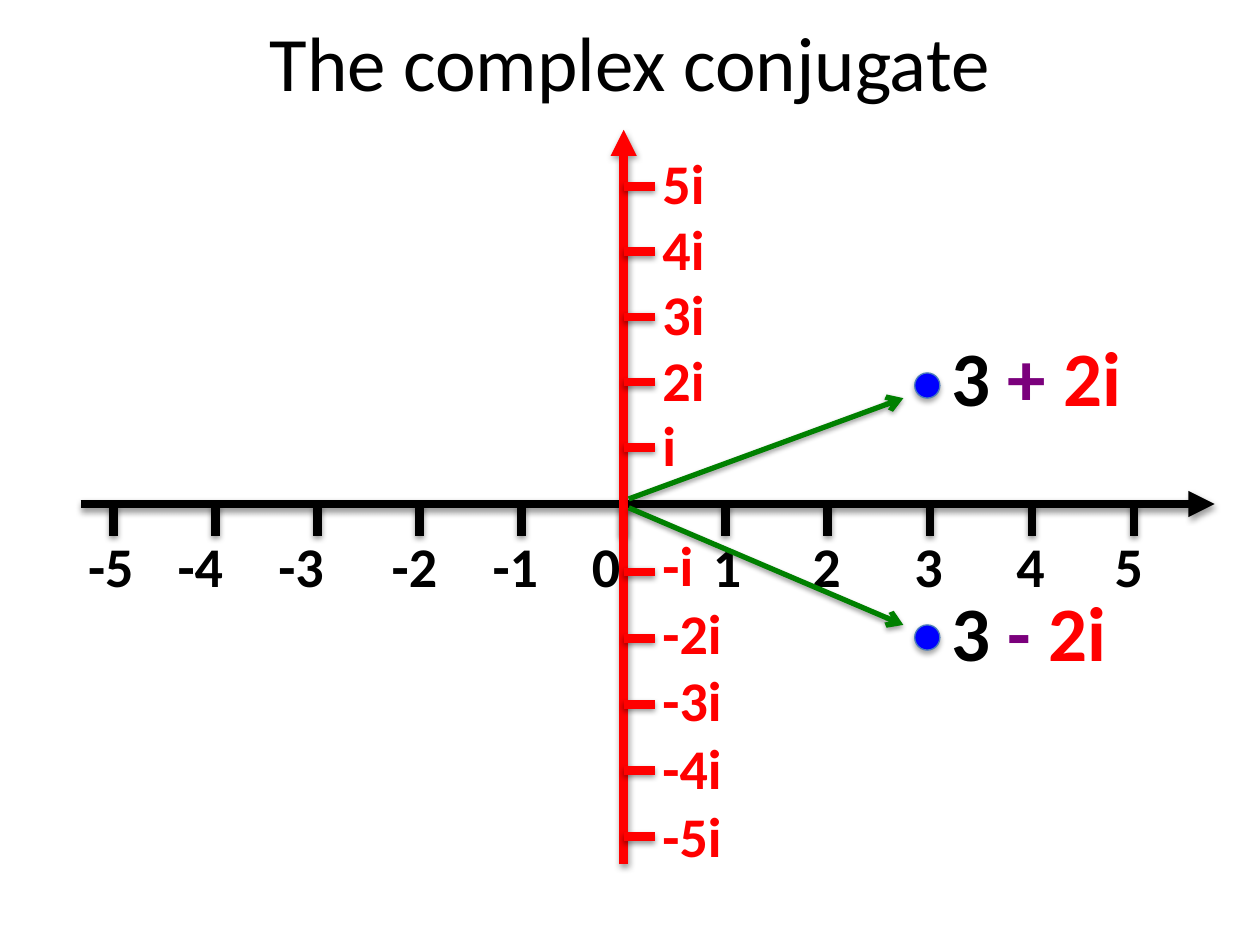
"""Build a slide that plots a complex number and its conjugate."""
from dataclasses import dataclass

from lxml import etree
from pptx import Presentation
from pptx import util as u
from pptx.dml.color import RGBColor
from pptx.enum import shapes, text
from pptx.oxml.ns import qn


@dataclass(frozen=True)
class Theme:
    """Colours, type sizes and line widths of the slide."""
    font: str = "Calibri"
    real: str = "000000"
    imaginary: str = "FF0000"
    operator: str = "7B007C"
    vector: str = "008000"
    point: str = "0000FF"
    outline: str = "4B7EBC"
    large: int = 44
    label: int = 32
    axis_width: float = 5
    vector_width: float = 3
    outline_width: float = 0.75


THEME = Theme()
ORIGIN_X, AXIS_Y = 4.95, 4
UNIT, TICK = 0.81, 0.25
REAL_CENTRES = (0.88, 1.59, 2.39, 3.29, 4.09, 4.81, 5.77, 6.56, 7.37, 8.18, 8.96)


def rgb(colour):
    """Turn a hex string into a colour."""
    return RGBColor.from_string(colour)


def spread(first, last, count=5):
    """Return evenly spaced values from first to last."""
    return [first + (last - first) * i / (count - 1) for i in range(count)]


def add_shadow(shape, opacity, distance):
    """Give a shape a soft shadow that falls straight down."""
    effects = etree.SubElement(shape.element.spPr, qn("a:effectLst"))
    shadow = etree.SubElement(
        effects, qn("a:outerShdw"), blurRad=str(u.Pt(3.1)), dist=str(u.Pt(distance)),
        dir="5400000", rotWithShape="0")
    colour = etree.SubElement(shadow, qn("a:srgbClr"), val="000000")
    etree.SubElement(colour, qn("a:alpha"), val=str(opacity * 1000))


def add_line(slide, start, end, colour, width=THEME.axis_width, head=None):
    """Draw a straight line, with an arrowhead at its end if one is named."""
    line = slide.shapes.add_connector(
        shapes.MSO_CONNECTOR.STRAIGHT, *(u.Inches(value) for value in (*start, *end)))
    line.line.color.rgb = rgb(colour)
    line.line.width = u.Pt(width)
    if head:
        etree.SubElement(line.element.spPr.find(qn("a:ln")), qn("a:tailEnd"), type=head)
    add_shadow(line, 38, 1.6)


def add_text(slide, box, runs, size, bold=True, align=text.PP_ALIGN.LEFT,
             anchor=text.MSO_ANCHOR.TOP):
    """Add one line of text made of (words, colour) runs."""
    frame = slide.shapes.add_textbox(*(u.Inches(value) for value in box)).text_frame
    frame.word_wrap = True
    frame.vertical_anchor = anchor
    paragraph = frame.paragraphs[0]
    paragraph.alignment = align
    paragraph.font.name = THEME.font
    paragraph.font.size = u.Pt(size)
    paragraph.font.bold = bold
    for words, colour in runs:
        run = paragraph.add_run()
        run.text = words
        run.font.color.rgb = rgb(colour)


def add_real_axis(slide):
    """Draw the horizontal axis with its ticks and numbers."""
    add_line(slide, (0.64, AXIS_Y), (9.64, AXIS_Y), THEME.real, head="triangle")
    for number, centre in zip(range(-5, 6), REAL_CENTRES):
        x = ORIGIN_X + number * UNIT
        add_line(slide, (x, AXIS_Y), (x, AXIS_Y + TICK), THEME.real)
        add_text(slide, (centre - 0.35, 4.17, 0.7, 0.64), [(str(number), THEME.real)],
                 THEME.label, align=text.PP_ALIGN.CENTER)


def add_imaginary_axis(slide):
    """Draw the vertical axis with its ticks and numbers."""
    add_line(slide, (ORIGIN_X, 6.86), (ORIGIN_X, 1.03), THEME.imaginary, head="triangle")
    ticks = spread(1.48, 3.55) + spread(4.54, 6.64)
    tops = spread(1.13, 3.21) + spread(4.16, 6.31)
    labels = ("5i", "4i", "3i", "2i", "i", "-i", "-2i", "-3i", "-4i", "-5i")
    for y, top, label in zip(ticks, tops, labels):
        add_line(slide, (ORIGIN_X, y), (ORIGIN_X + TICK, y), THEME.imaginary)
        add_text(slide, (5.16, top, 0.7, 0.64), [(label, THEME.imaginary)], THEME.label)


def add_number(slide, sign, point_top, label_top, start_y, end_y):
    """Plot a complex number as a point, a label and a vector."""
    point = slide.shapes.add_shape(
        shapes.MSO_SHAPE.OVAL, u.Inches(7.26), u.Inches(point_top), u.Inches(0.2), u.Inches(0.2))
    point.fill.solid()
    point.fill.fore_color.rgb = rgb(THEME.point)
    point.line.color.rgb = rgb(THEME.outline)
    point.line.width = u.Pt(THEME.outline_width)
    add_shadow(point, 35, 1.8)
    add_line(slide, (4.99, start_y), (7.17, end_y), THEME.vector, THEME.vector_width, "arrow")
    add_text(slide, (7.45, label_top, 1.57, 0.84),
             [("3 ", THEME.real), (sign + " ", THEME.operator), ("2i", THEME.imaginary)],
             THEME.large)


def main():
    """Build and save the slide."""
    presentation = Presentation()
    presentation.slide_width, presentation.slide_height = u.Inches(10), u.Inches(7.5)
    slide = presentation.slides.add_slide(presentation.slide_layouts[6])
    add_text(slide, (0.5, -0.14, 9, 1.25), [("The complex conjugate", THEME.real)], THEME.large,
             bold=False, align=text.PP_ALIGN.CENTER, anchor=text.MSO_ANCHOR.MIDDLE)
    add_real_axis(slide)
    add_imaginary_axis(slide)
    add_number(slide, "+", 2.96, 2.57, 3.96, 3.16)
    add_number(slide, "-", 4.96, 4.59, 4.03, 4.96)
    presentation.save("out.pptx")


if __name__ == "__main__":
    main()
